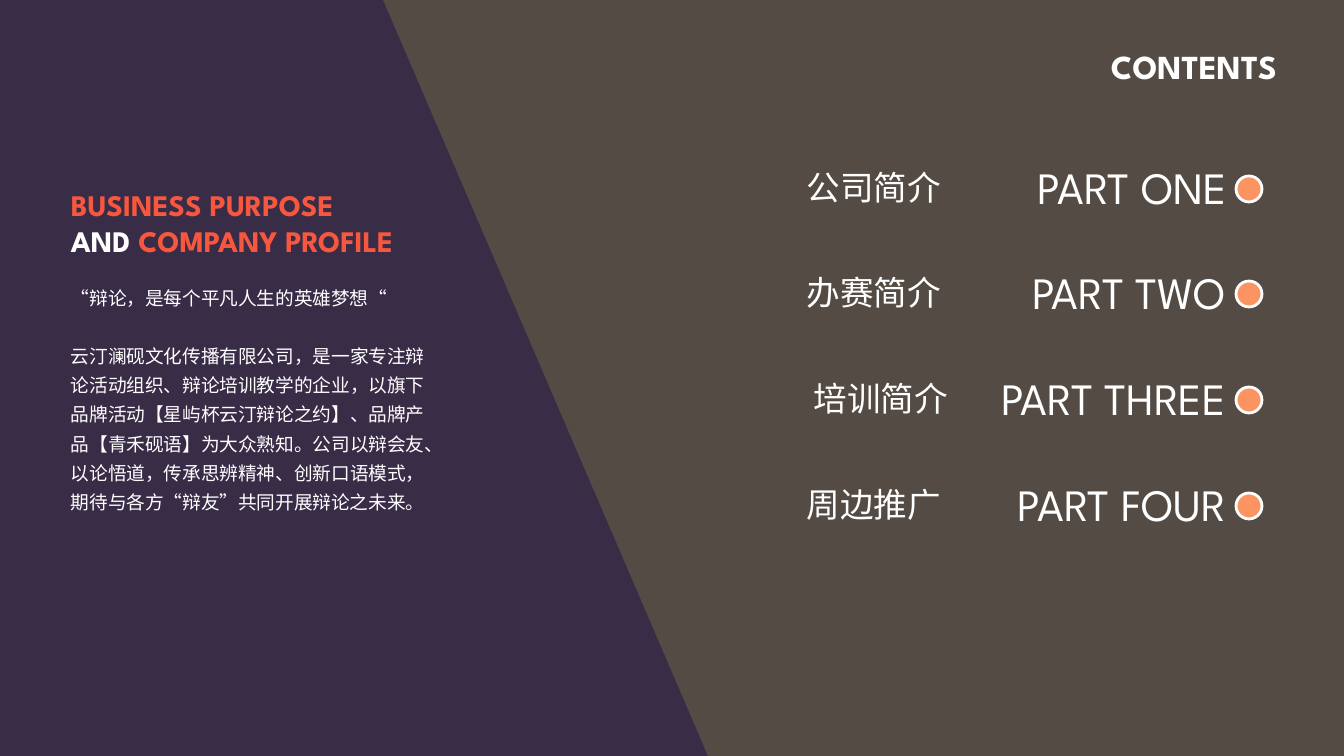
from pptx import Presentation
from pptx.dml.color import RGBColor
from pptx.enum.shapes import MSO_SHAPE as Shape
from pptx.enum.text import MSO_ANCHOR as Anchor, MSO_AUTO_SIZE as AutoSize, PP_ALIGN as Align
from pptx.util import Pt

PX = 914400 / 134.4
WIDTH, HEIGHT = 1344, 756
WHITE, CORAL, ORANGE = "FFFFFF", "F6573E", "FB9460"
PURPLE, BROWN = "392C47", "544C44"
LATIN, BODY = "League Spartan", "Arial"

# label, label left, label right, part name, part left, part width
PARTS = [
    ("公司简介", 778, 948, "PART ONE", 1007, 227),
    ("办赛简介", 468, 948, "PART TWO", 1001, 232),
    ("培训简介", 558, 955, "PART THREE", 974, 259),
    ("周边推广", 573, 948, "PART FOUR", 981, 252),
]


def px(length):
    return round(length * PX)


def paint(fill, color):
    fill.solid()
    fill.fore_color.rgb = RGBColor.from_string(color)


def add_text(page, left, top, width, height, wrap=True, anchor=Anchor.TOP):
    """Add an empty text box and return its text frame."""
    frame = page.shapes.add_textbox(px(left), px(top), px(width), px(height)).text_frame
    frame.margin_left = frame.margin_right = frame.margin_top = frame.margin_bottom = px(7)
    frame.word_wrap = wrap
    frame.auto_size = AutoSize.SHAPE_TO_FIT_TEXT
    frame.vertical_anchor = anchor
    return frame


def write(para, spans, size, font=LATIN, color=WHITE, bold=False, align=Align.LEFT):
    """Fill a paragraph; a span is (text, own font or None, own colour or None)."""
    para.alignment = align
    para.font.size, para.font.name, para.font.bold = Pt(size), font, bold
    para.font.color.rgb = RGBColor.from_string(color)
    for text, own_font, own_color in spans:
        span = para.add_run()
        span.text = text
        if own_font:
            span.font.name = own_font
        if own_color:
            span.font.color.rgb = RGBColor.from_string(own_color)


def plain(text):
    return [(text, None, None)]


def add_panel(page):
    builder = page.shapes.build_freeform(0, 0, scale=PX)
    builder.add_line_segments([(383, 0), (708, HEIGHT), (0, HEIGHT)], close=True)
    panel = builder.convert_to_shape()
    panel.shadow.inherit = False
    paint(panel.fill, PURPLE)
    panel.line.fill.background()


def add_dot(page, left, top, size):
    dot = page.shapes.add_shape(Shape.OVAL, px(left), px(top), px(size), px(size))
    dot.shadow.inherit = False
    paint(dot.fill, ORANGE)
    paint(dot.line.fill, WHITE)
    dot.line.width = Pt(1.5)


def add_profile(page):
    heading = add_text(page, 64, 180, 363, 89, wrap=False)
    write(heading.paragraphs[0], plain("BUSINESS PURPOSE"), 16, color=CORAL, bold=True)
    write(heading.add_paragraph(),
          [("AND ", None, WHITE), ("COMPANY PROFILE", None, None)],
          16, color=CORAL, bold=True)

    profile = add_text(page, 64, 273, 372, 273)
    motto = profile.paragraphs[0]
    story = profile.add_paragraph()
    opening, closing = ("“", LATIN, None), ("”", LATIN, None)
    write(motto, [opening, *plain("辩论，是每个平凡人生的英雄梦想"), opening], 10, BODY)
    write(story, [
        *plain("云汀澜砚文化传播有限公司，是一家专注辩论活动组织、辩论培训教学的企业，"
               "以旗下品牌活动【星屿杯云汀辩论之约】、品牌产品【青禾砚语】为大众熟知。"
               "公司以辩会友、以论悟道，传承思辨精神、创新口语模式，期待与各方"),
        opening, *plain("辩友"), closing, *plain("共同开展辩论之未来。"),
    ], 10, BODY)
    motto.line_spacing = story.line_spacing = 1.3
    story.space_before = Pt(15.6)


def add_contents(page):
    title = add_text(page, 1101, 39, 183, 55, wrap=False)
    write(title.paragraphs[0], plain("CONTENTS"), 18, bold=True, align=Align.RIGHT)
    for row, (label, label_left, label_right, part, part_left, part_width) in enumerate(PARTS):
        top = 153 + row * 317 // 3
        box = add_text(page, label_left, top + 7, label_right - label_left, 54)
        write(box.paragraphs[0], plain(label), 18, BODY, align=Align.RIGHT)
        add_dot(page, 1236, top + 23, 26)
        box = add_text(page, part_left, top, part_width, 67, wrap=False, anchor=Anchor.MIDDLE)
        write(box.paragraphs[0], plain(part), 24, align=Align.RIGHT)


def main():
    deck = Presentation()
    deck.slide_width, deck.slide_height = px(WIDTH), px(HEIGHT)
    page = deck.slides.add_slide(deck.slide_layouts[6])
    paint(page.background.fill, BROWN)
    add_panel(page)
    add_profile(page)
    add_contents(page)
    deck.save("out.pptx")


if __name__ == "__main__":
    main()
